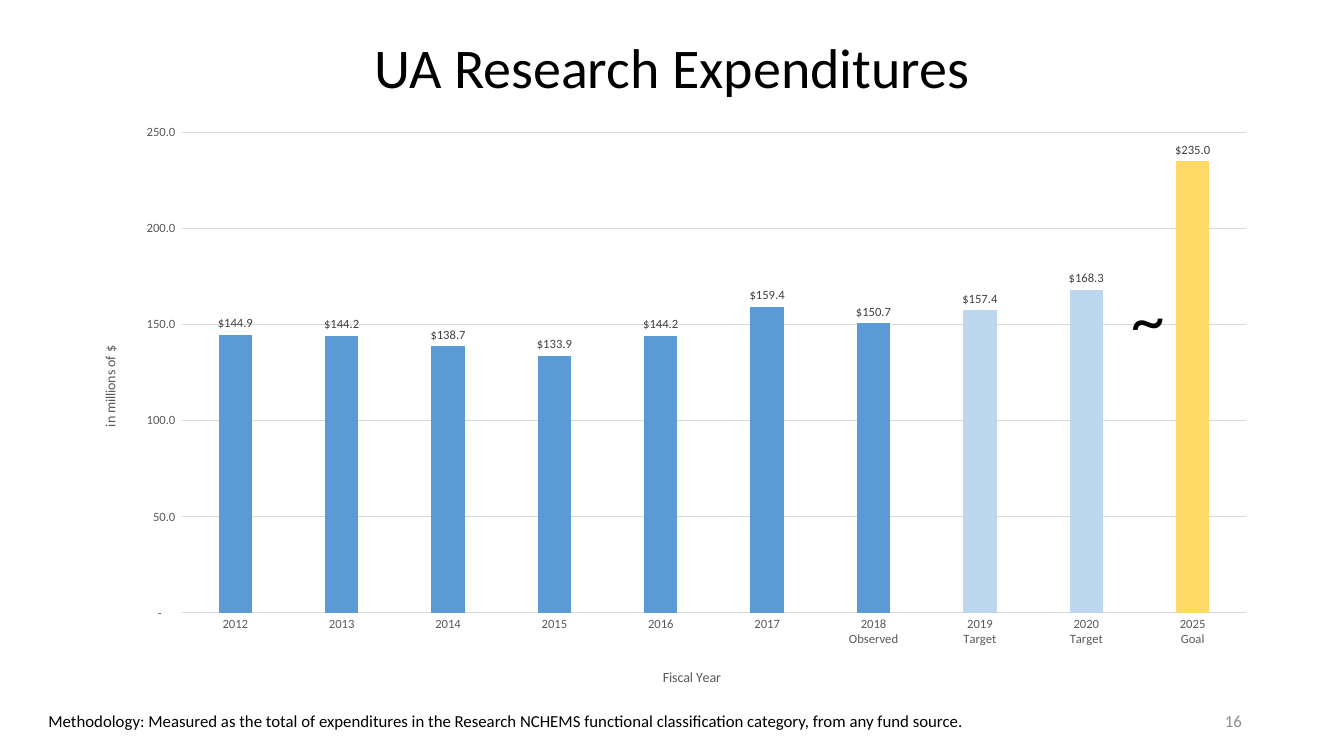
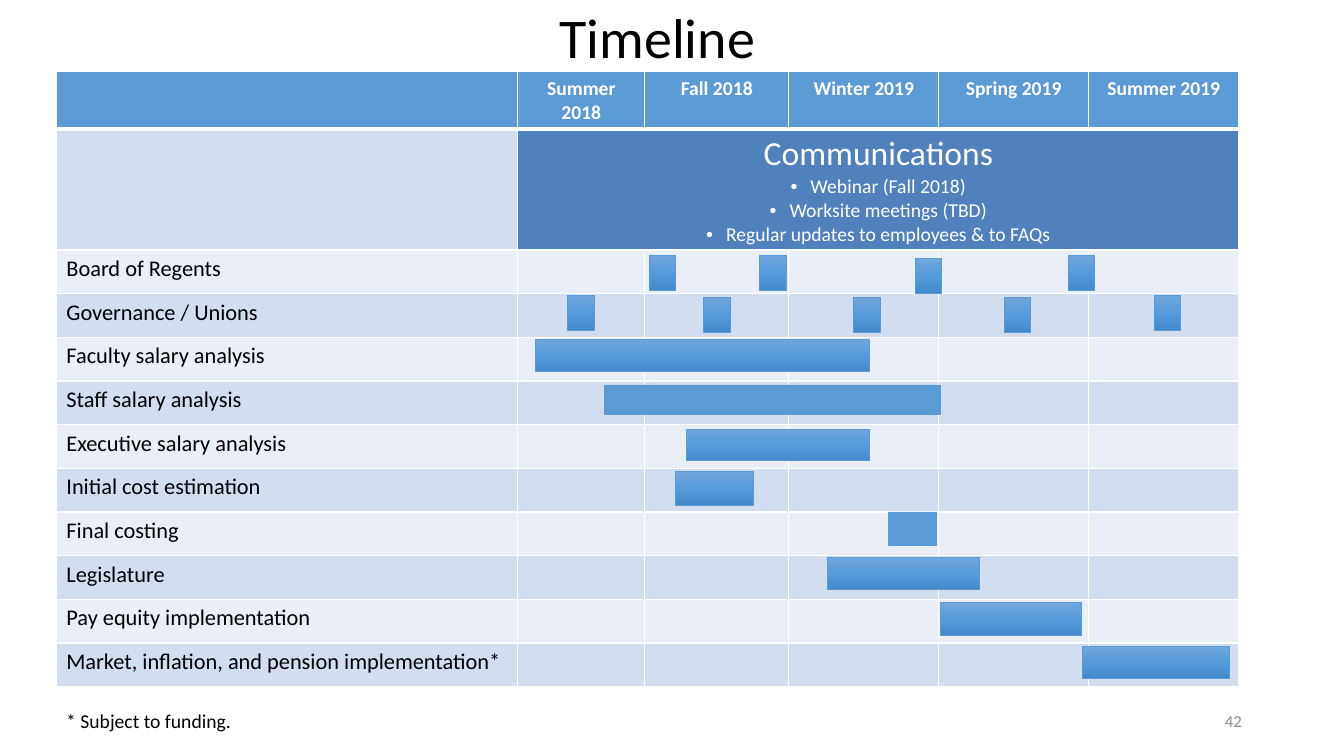
from copy import deepcopy

from lxml import etree
from pptx import Presentation
from pptx import util as u
from pptx.chart import data
from pptx.dml import color
from pptx.enum import chart as ch
from pptx.enum import shapes, text
from pptx.oxml import ns

HUES = {
    "black": "000000", "white": "FFFFFF", "blue": "5B9BD5", "sky": "BDD7EE",
    "gold": "FFD966", "deep": "4F81BD", "dark": "D2DEEF", "pale": "EAEFF7",
    "grid": "D9D9D9", "label": "404040", "axis": "595959", "page": "8C8C8C",
    "top": "71A6DB", "mid": "559BDB", "low": "448ACA",
}
LEFT, MID, RIGHT = text.PP_ALIGN.LEFT, text.PP_ALIGN.CENTER, text.PP_ALIGN.RIGHT


def hue(name):
    return color.RGBColor.from_string(HUES[name])


def put(item, **vals):
    for key, val in vals.items():
        setattr(item, key, val)


def font(item, size, tone="black", bold=False):
    put(item, name="Calibri", size=u.Pt(size), bold=bold)
    item.color.rgb = hue(tone)


def paint(fill, tone):
    fill.solid()
    fill.fore_color.rgb = hue(tone)


def place(item, box):
    put(item, **dict(zip(("left", "top", "width", "height"), map(u.Cm, box))))


def layout(node, **vals):
    spot = node.find(ns.qn("c:layout"))
    if spot is None:
        spot = etree.Element(ns.qn("c:layout"))
        node.insert(0, spot)
    for kid in list(spot):
        spot.remove(kid)
    form = etree.SubElement(spot, ns.qn("c:manualLayout"))
    for key, val in vals.items():
        etree.SubElement(form, ns.qn("c:" + key)).set("val", str(val))


def edge(cell, base):
    props = cell._tc.get_or_add_tcPr()
    for spot, (side, wide) in enumerate(zip(("lnL", "lnR", "lnT", "lnB"), (1, 1, 1, base))):
        line = etree.Element(ns.qn("a:" + side), w=str(u.Pt(wide)))
        fill = etree.SubElement(line, ns.qn("a:solidFill"))
        etree.SubElement(fill, ns.qn("a:srgbClr"), val=HUES["white"])
        props.insert(spot, line)


def bullet(para):
    props = para._p.get_or_add_pPr()
    props.set("marL", str(u.Cm(0.5)))
    props.set("indent", str(-u.Cm(0.5)))
    etree.SubElement(props, ns.qn("a:buFont"), typeface="Arial")
    etree.SubElement(props, ns.qn("a:buChar"), char="•")


class Deck:
    def __init__(self):
        self.pres = Presentation()
        put(self.pres, slide_width=u.Cm(33.87), slide_height=u.Cm(19.05))

    def page(self, title, box, number):
        self.slide = self.pres.slides.add_slide(self.pres.slide_layouts[5])
        head = self.slide.shapes.title
        place(head, box)
        put(head.text_frame, word_wrap=True, auto_size=text.MSO_AUTO_SIZE.NONE,
            vertical_anchor=text.MSO_ANCHOR.MIDDLE)
        para = head.text_frame.paragraphs[0]
        para.line_spacing = 0.9
        self.add(para, title, 40, align=MID)
        self.note(number, (23.93, 17.65, 7.62, 1.02), 12, "page", RIGHT,
                  anchor=text.MSO_ANCHOR.MIDDLE)

    def add(self, para, words, size, tone="black", align=LEFT, bold=False):
        para.alignment = align
        run = para.add_run()
        run.text = words
        font(run.font, size, tone, bold)

    def note(self, words, box, size, tone="black", align=LEFT,
             wrap=True, anchor=text.MSO_ANCHOR.TOP):
        frame = self.slide.shapes.add_textbox(*map(u.Cm, box)).text_frame
        put(frame, word_wrap=wrap, vertical_anchor=anchor)
        self.add(frame.paragraphs[0], words, size, tone, align)

    def axis(self, axis, title, **spot):
        put(axis, major_tick_mark=ch.XL_TICK_MARK.NONE,
            minor_tick_mark=ch.XL_TICK_MARK.NONE)
        font(axis.tick_labels.font, 9, "axis")
        head = axis.axis_title
        self.add(head.text_frame.paragraphs[0], title, 10, "axis", MID)
        layout(head._element, xMode="edge", yMode="edge", **spot)
        return head

    def chart(self, box, cats, vals, tones):
        feed = data.CategoryChartData()
        feed.categories = cats
        feed.add_series("Series 1", vals)
        chart = self.slide.shapes.add_chart(
            ch.XL_CHART_TYPE.COLUMN_CLUSTERED, *map(u.Cm, box), feed).chart
        put(chart, has_legend=False, has_title=False)
        font(chart.font, 10)
        layout(chart._chartSpace.chart.plotArea, layoutTarget="inner",
               xMode="edge", yMode="edge", x=0.09, y=0.03, w=0.89, h=0.82)

        years, sums = chart.category_axis, chart.value_axis
        self.axis(years, "Fiscal Year", x=0.49, y=0.94)
        head = self.axis(sums, "in millions of $", x=0.02, y=0.39)
        for body in head._element.iter(ns.qn("a:bodyPr")):
            body.set("rot", "-5400000")
            body.set("vert", "horz")
        put(sums, minimum_scale=0, maximum_scale=250, major_unit=50)
        put(sums.tick_labels, number_format_is_linked=False,
            number_format='_(* #,##0.0_);_(* \\(#,##0.0\\);_(* "-"??_);_(@_)')
        for line in (years.format.line, sums.major_gridlines.format.line):
            line.width = u.Pt(0.75)
            paint(line.fill, "grid")
        sums.format.line.fill.background()

        plot = chart.plots[0]
        put(plot, gap_width=219, overlap=-27, vary_by_categories=False)
        bars = plot.series[0]
        paint(bars.format.fill, "blue")
        for spot, tone in tones.items():
            paint(bars.points[spot].format.fill, tone)
        tags = bars.data_labels
        put(tags, show_value=True, number_format='"$"#,##0.0',
            number_format_is_linked=False,
            position=ch.XL_LABEL_POSITION.OUTSIDE_END)
        font(tags.font, 9, "label")

    def table(self, spot, cols, rows, heads, news, tasks):
        grid = self.slide.shapes.add_table(
            len(rows), len(cols), *map(u.Cm, (*spot, sum(cols), sum(rows)))).table
        put(grid, first_row=False, horz_banding=False)
        for col, wide in zip(grid.columns, cols):
            col.width = u.Cm(wide)
        for num, (row, tall) in enumerate(zip(grid.rows, rows)):
            row.height = u.Cm(tall)
            tone = "blue" if num == 0 else ("pale", "dark")[num % 2]
            for cell in row.cells:
                paint(cell.fill, tone)
                edge(cell, 1 if num else 3)
        for num, words in enumerate(heads, 1):
            self.add(grid.cell(0, num).text_frame.paragraphs[0],
                     words, 14, "white", MID, True)
        for num, words in enumerate(tasks, 2):
            self.add(grid.cell(num, 0).text_frame.paragraphs[0], words, 16)
        wide = grid.cell(1, 1)
        wide.merge(grid.cell(1, len(cols) - 1))
        paint(wide.fill, "deep")
        frame = wide.text_frame
        self.add(frame.paragraphs[0], news[0], 24, "white", MID)
        for words in news[1:]:
            para = frame.add_paragraph()
            self.add(para, words, 14, "white", MID)
            bullet(para)

    def bar(self, box, flat=False):
        bar = self.slide.shapes.add_shape(
            shapes.MSO_SHAPE.RECTANGLE, *map(u.Cm, box))
        bar.shadow.inherit = False
        bar.line.width = u.Pt(0.5)
        paint(bar.line.fill, "blue")
        if flat:
            paint(bar.fill, "blue")
            return
        bar.fill.gradient()
        bar.fill.gradient_angle = 270
        stops = bar._element.spPr.find(ns.qn("a:gradFill")).find(ns.qn("a:gsLst"))
        stops.append(deepcopy(stops[-1]))
        for num, tone in enumerate(("top", "mid", "low")):
            stop = bar.fill.gradient_stops[num]
            stop.position = num / 2
            stop.color.rgb = hue(tone)


def main():
    deck = Deck()
    deck.page("UA Research Expenditures", (2.33, 0.38, 29.21, 2.79), "16")
    cats = [str(year) for year in range(2012, 2018)]
    cats += ["2018\nObserved", "2019\nTarget", "2020\nTarget", "2025\nGoal"]
    deck.chart((1.88, 2.9, 30.12, 14.76), cats,
               (144.9, 144.2, 138.7, 133.9, 144.2, 159.4, 150.7, 157.4, 168.3, 235),
               {7: "sky", 8: "sky", 9: "gold"})
    deck.note("Methodology: Measured as the total of expenditures in the Research NCHEMS "
              "functional classification category, from any fund source.",
              (0.97, 17.78, 28.85, 0.76), 12)
    deck.note("~", (28.27, 6.83, 1.52, 1.68), 48, wrap=False)

    deck.page("Timeline", (1.96, 0.15, 29.21, 1.75), "42")
    deck.table(
        (1.42, 1.81), (11.63, 3.2, 3.63, 3.78, 3.78, 3.78), (1.42, 3) + (1.1,) * 10,
        ("Summer 2018", "Fall 2018", "Winter 2019", "Spring 2019", "Summer 2019"),
        ("Communications", "Webinar (Fall 2018)", "Worksite meetings (TBD)",
         "Regular updates to employees & to FAQs"),
        ("Board of Regents", "Governance / Unions", "Faculty salary analysis",
         "Staff salary analysis", "Executive salary analysis",
         "Initial cost estimation", "Final costing", "Legislature",
         "Pay equity implementation",
         "Market, inflation, and pension implementation*"))
    regents = ((16.36, 6.43), (19.15, 6.43), (23.06, 6.5), (26.92, 6.43))
    unions = ((14.3, 7.44), (17.73, 7.49), (21.51, 7.49), (25.3, 7.49), (29.08, 7.44))
    for spot in regents + unions:
        deck.bar((*spot, 0.67, 0.89))
    spans = (
        (13.49, 8.56, 8.43, 0.79), (17.3, 10.82, 4.62, 0.79),
        (17.02, 11.89, 1.96, 0.84), (20.85, 14.05, 3.84, 0.81),
        (23.7, 15.19, 3.56, 0.81), (27.28, 16.28, 3.71, 0.81),
    )
    for box in spans:
        deck.bar(box)
    for box in ((15.24, 9.7, 8.46, 0.74), (22.4, 12.9, 1.19, 0.84)):
        deck.bar(box, flat=True)
    deck.note("* Subject to funding.", (1.42, 17.73, 8.69, 0.86), 14)
    deck.pres.save("out.pptx")


if __name__ == "__main__":
    main()
